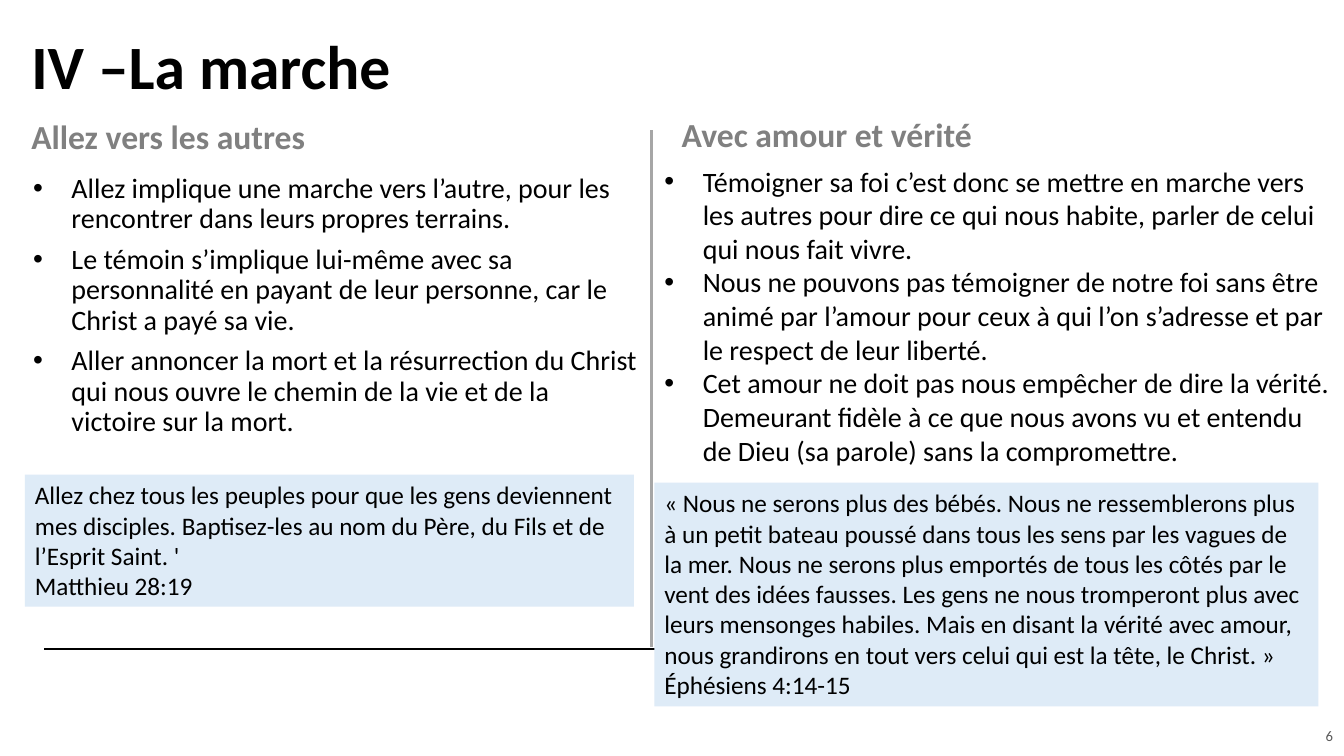
from dataclasses import dataclass

from lxml import etree
from pptx import Presentation
from pptx import util as u
from pptx.dml.color import RGBColor
from pptx.enum import shapes, text
from pptx.oxml import ns


@dataclass(frozen=True)
class Theme:
    """Font, colours and type sizes of the slide."""
    font: str = "Calibri"
    ink: str = "000000"
    heading: str = "808080"
    divider: str = "A6A6A6"
    number: str = "595959"
    passage: str = "DEEBF7"
    title_size: float = 44
    heading_size: float = 24
    point_size: float = 20
    passage_size: float = 18
    number_size: float = 10.5


@dataclass(frozen=True)
class Box:
    """A rectangle in inches."""
    left: float
    top: float
    width: float
    height: float

    def inner(self, left, top, width, height):
        """Return an inner box given in percent of this one."""
        return Box(self.left + self.width * left / 100, self.top + self.height * top / 100,
                   self.width * width / 100, self.height * height / 100)

    def lengths(self):
        """Return the position and size as slide lengths."""
        return [u.Inches(value) for value in (self.left, self.top, self.width, self.height)]


THEME = Theme()
SLIDE = Box(0, 0, 13.33, 7.5)
TOP = text.MSO_ANCHOR.TOP
LEFT = text.PP_ALIGN.LEFT

COLUMNS = [
    {
        "box": SLIDE.inner(1.58, 14.4, 46.66, 80),
        "heading": "Allez vers les autres",
        "heading_area": (0, 0.5, 100, 8.3),
        "heading_anchor": text.MSO_ANCHOR.BOTTOM,
        "points": [
            "Allez implique une marche vers l’autre, pour les rencontrer dans leurs propres terrains.",
            "Le témoin s’implique lui-même avec sa personnalité en payant de leur personne, "
            "car le Christ a payé sa vie.",
            "Aller annoncer la mort et la résurrection du Christ qui nous ouvre le chemin "
            "de la vie et de la victoire sur la mort.",
        ],
        "points_area": (0.3, 10, 99.7, 72.5),
        "spacing": {"line_spacing": 0.9, "space_before": u.Pt(7.5)},
        "passage": [
            "Allez chez tous les peuples pour que les gens deviennent mes disciples. "
            "Baptisez-les au nom du Père, du Fils et de l’Esprit Saint. '",
            "Matthieu 28:19",
        ],
        "passage_area": (0.6, 60.5, 97.1, 21.8),
    },
    {
        "box": SLIDE.inner(48.69, 14.4, 51.31, 80),
        "heading": "Avec amour et vérité",
        "heading_area": (2.5, 0, 71.3, 8.3),
        "heading_anchor": TOP,
        "points": [
            "Témoigner sa foi c’est donc se mettre en marche vers les autres pour dire "
            "ce qui nous habite, parler de celui qui nous fait vivre.",
            "Nous ne pouvons pas témoigner de notre foi sans être animé par l’amour pour ceux "
            "à qui l’on s’adresse et par le respect de leur liberté.",
            "Cet amour ne doit pas nous empêcher de dire la vérité. Demeurant fidèle à ce que "
            "nous avons vu et entendu de Dieu (sa parole) sans la compromettre.",
        ],
        "points_area": (0, 8.3, 100, 85.8),
        "spacing": {"line_spacing": 1.0, "space_before": u.Pt(0)},
        "passage": [
            "« Nous ne serons plus des bébés. Nous ne ressemblerons plus à un petit bateau poussé "
            "dans tous les sens par les vagues de la mer. Nous ne serons plus emportés de tous les "
            "côtés par le vent des idées fausses. Les gens ne nous tromperont plus avec leurs "
            "mensonges habiles. Mais en disant la vérité avec amour, nous grandirons en tout vers "
            "celui qui est la tête, le Christ. »",
            "Éphésiens 4:14-15",
        ],
        "passage_area": (0, 61.8, 96.3, 37),
    },
]


def apply(target, values):
    """Set each named attribute on the target."""
    for name, value in values.items():
        setattr(target, name, value)


def place(shape, box):
    """Move and size a shape to fill the box."""
    apply(shape, dict(zip(("left", "top", "width", "height"), box.lengths())))


def write(shape, lines, size, color=THEME.ink, bold=False, anchor=TOP, spacing=None, align=LEFT):
    """Write formatted paragraphs into a shape and return them."""
    frame = shape.text_frame
    apply(frame, {"word_wrap": True, "auto_size": text.MSO_AUTO_SIZE.NONE,
                  "vertical_anchor": anchor})
    frame.text = "\n".join(lines)
    for para in frame.paragraphs:
        apply(para, {"alignment": align, "line_spacing": 1.0, "space_before": u.Pt(0),
                     **(spacing or {})})
        for span in para.runs:
            apply(span.font, {"name": THEME.font, "size": u.Pt(size), "bold": bold})
            span.font.color.rgb = RGBColor.from_string(color)
    return frame.paragraphs


def add_bullet(para):
    """Give a paragraph a round bullet and a hanging indent."""
    settings = para._p.get_or_add_pPr()
    indent = u.Inches(0.38)
    settings.set("marL", str(indent))
    settings.set("indent", str(-indent))
    etree.SubElement(settings, ns.qn("a:buFont")).set("typeface", "Arial")
    etree.SubElement(settings, ns.qn("a:buChar")).set("char", "•")


def add_rule(page, box, color, weight):
    """Draw a plain line from corner to corner of the box."""
    left, top, width, height = box.lengths()
    rule = page.shapes.add_connector(shapes.MSO_CONNECTOR.STRAIGHT,
                                     left, top, left + width, top + height)
    rule.line.color.rgb = RGBColor.from_string(color)
    rule.line.width = u.Pt(weight)
    etree.SubElement(rule._element.spPr, ns.qn("a:effectLst"))


def add_passage(page, box, lines):
    """Add a tinted panel with a Bible passage."""
    panel = page.shapes.add_shape(shapes.MSO_SHAPE.RECTANGLE, *box.lengths())
    panel.shadow.inherit = False
    panel.fill.solid()
    panel.fill.fore_color.rgb = RGBColor.from_string(THEME.passage)
    panel.line.fill.background()
    write(panel, lines, THEME.passage_size)


def add_column(page, box, heading, points, content):
    """Fill a column box with its heading, bullet points and passage."""
    place(heading, box.inner(*content["heading_area"]))
    write(heading, [content["heading"]], THEME.heading_size, THEME.heading, True,
          content["heading_anchor"], content["spacing"])
    place(points, box.inner(*content["points_area"]))
    for para in write(points, content["points"], THEME.point_size, spacing=content["spacing"]):
        add_bullet(para)
    add_passage(page, box.inner(*content["passage_area"]), content["passage"])


def add_title(page, box):
    """Place the slide title in the box."""
    place(page.shapes.title, box)
    write(page.shapes.title, ["IV –La marche"], THEME.title_size, bold=True,
          spacing={"line_spacing": 0.9})


def add_number(page, box):
    """Write the page number in the box."""
    number = page.shapes.add_textbox(*box.lengths())
    write(number, ["6"], THEME.number_size, THEME.number,
          anchor=text.MSO_ANCHOR.MIDDLE, align=text.PP_ALIGN.RIGHT)


def main():
    """Build and save the deck."""
    deck = Presentation()
    apply(deck, {"slide_width": u.Inches(SLIDE.width), "slide_height": u.Inches(SLIDE.height)})
    page = deck.slides.add_slide(deck.slide_layouts.get_by_name("Comparison"))
    add_title(page, SLIDE.inner(1.58, 4.13, 98.35, 13.07))
    add_rule(page, SLIDE.inner(3.3, 85.87, 92.95, 0), THEME.ink, 1)
    add_rule(page, SLIDE.inner(48.46, 17.2, 0, 68.4), THEME.divider, 2.25)
    bodies = list(page.placeholders)[1:]
    for content, heading, points in zip(COLUMNS, bodies[::2], bodies[1::2]):
        add_column(page, content["box"], heading, points, content)
    add_number(page, SLIDE.inner(96.85, 94.67, 3.08, 5.33))
    deck.save("out.pptx")


if __name__ == "__main__":
    main()
